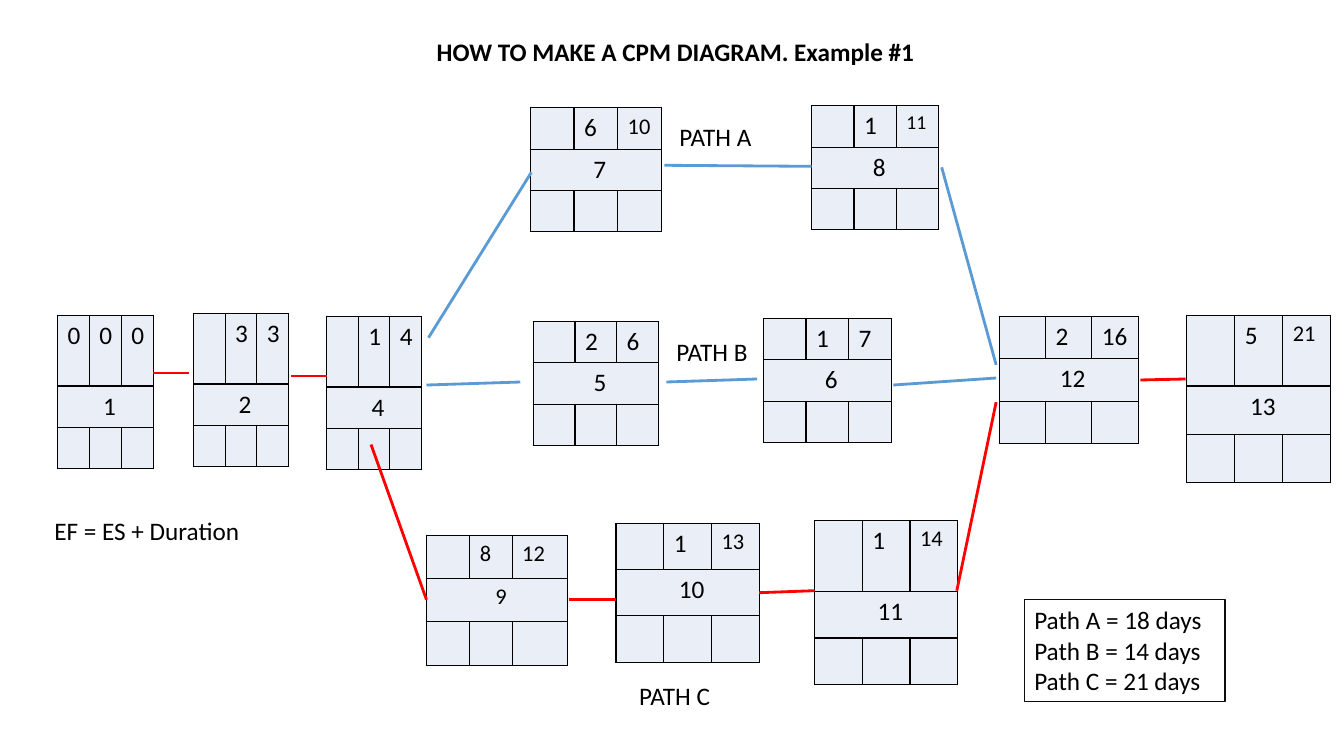
import pptx
import pptx.dml.color
import pptx.enum.shapes
import pptx.enum.text
import pptx.oxml
import pptx.oxml.ns
import pptx.util
from lxml import etree

Inches, Pt = pptx.util.Inches, pptx.util.Pt
RGBColor = pptx.dml.color.RGBColor
PP_ALIGN, MSO_ANCHOR = pptx.enum.text.PP_ALIGN, pptx.enum.text.MSO_ANCHOR

BLACK = RGBColor(0x00, 0x00, 0x00)
BOX_LINE = RGBColor(0x0D, 0x0D, 0x0D)
CELL_FILL = RGBColor(0xEA, 0xEF, 0xF7)
CRITICAL = RGBColor(0xFF, 0x00, 0x00)
REGULAR = RGBColor(0x5B, 0x9B, 0xD5)
FONT = "Calibri"

# activity: left, top, width, first row, other rows, ES, duration, EF, format
ACTIVITIES = {
    "1": (0.57, 3.13, 0.95, 0.7, 0.41, "0", "0", "0", {}),
    "2": (1.92, 3.11, 0.94, 0.7, 0.41, "", "3", "3", {}),
    "4": (3.24, 3.14, 0.94, 0.7, 0.41, "", "1", "4", {}),
    "5": (5.29, 3.19, 1.24, 0.41, 0.41, "", "2", "6", {}),
    "6": (7.57, 3.16, 1.27, 0.41, 0.41, "", "1", "7", {}),
    "7": (5.26, 1.07, 1.3, 0.41, 0.41, "", "6", "10", {"finish_size": 16}),
    "8": (8.05, 1.05, 1.26, 0.41, 0.41, "", "1", "11", {"finish_size": 14}),
    "9": (4.23, 5.31, 1.4, 0.43, 0.43, "", "8", "12",
          {"size": 16, "finish_size": 16, "columns": (0.43, 0.42, 0.55)}),
    "10": (6.11, 5.19, 1.42, 0.46, 0.46, "", "1", "13", {"finish_size": 16}),
    "11": (8.08, 5.16, 1.42, 0.71, 0.46, "", "1", "14", {"finish_size": 16}),
    "12": (9.91, 3.14, 1.38, 0.42, 0.42, "", "2", "16", {}),
    "13": (11.77, 3.13, 1.43, 0.7, 0.48, "", "5", "21", {"finish_size": 16}),
}

LINKS = {
    CRITICAL: [
        (1.52, 3.7, 1.87, 3.7), (2.89, 3.73, 3.24, 3.73),
        (3.68, 4.41, 4.23, 5.95), (5.64, 5.95, 6.11, 5.95),
        (7.53, 5.88, 8.08, 5.86), (9.49, 5.86, 9.88, 3.99),
        (11.31, 3.77, 11.76, 3.76),
    ],
    REGULAR: [
        (4.25, 3.35, 5.27, 1.71), (6.59, 1.64, 8.05, 1.65),
        (9.34, 1.66, 9.88, 3.62), (4.23, 3.82, 5.16, 3.79),
        (6.61, 3.79, 7.51, 3.76), (8.86, 3.82, 9.88, 3.75),
    ],
}

LABELS = [
    ("EF = ES + Duration", 0.44, 5.06, 2.32, True),
    ("PATH A", 6.64, 1.15, 0.92, False),
    ("PATH B", 6.61, 3.29, 0.91, False),
    ("PATH C", 6.24, 6.7, 0.91, False),
]


def write(frame, *lines, size=18, bold=False, align=PP_ALIGN.LEFT, spacing=1.0):
    for index, line in enumerate(lines):
        paragraph = frame.add_paragraph() if index else frame.paragraphs[0]
        paragraph.alignment = align
        paragraph.line_spacing = spacing
        run = paragraph.add_run()
        run.text = line
        run.font.name = FONT
        run.font.size = Pt(size)
        run.font.bold = bold
        run.font.color.rgb = BLACK


def style_cell(cell):
    cell.fill.solid()
    cell.fill.fore_color.rgb = CELL_FILL
    cell.margin_right = Inches(0.02)
    properties = cell._tc.get_or_add_tcPr()
    for position, edge in enumerate(("lnL", "lnR", "lnT", "lnB")):
        border = pptx.oxml.parse_xml(
            f'<a:{edge} {pptx.oxml.ns.nsdecls("a")} w="{Pt(1)}"><a:solidFill>'
            f'<a:srgbClr val="{BLACK}"/></a:solidFill></a:{edge}>')
        properties.insert(position, border)


def add_title(slide, left, top, width, height):
    title = slide.shapes.title
    title.left, title.top = Inches(left), Inches(top)
    title.width, title.height = Inches(width), Inches(height)
    title.text_frame.vertical_anchor = MSO_ANCHOR.BOTTOM
    write(title.text_frame, "HOW TO MAKE A CPM DIAGRAM. Example #1",
          bold=True, align=PP_ALIGN.CENTER, spacing=0.9)


def add_activity(slide, name, left, top, width, first_row, other_row,
                 start, duration, finish, size=18, finish_size=18, columns=None):
    """Draw a node: ES, duration and EF over the activity number and a blank row."""
    heights = (first_row, other_row, other_row)
    table = slide.shapes.add_table(
        3, 3, Inches(left), Inches(top), Inches(width), Inches(sum(heights))).table
    table.first_row = table.horz_banding = False
    for column, column_width in zip(table.columns, columns or [width / 3] * 3):
        column.width = Inches(column_width)
    for row, height in zip(table.rows, heights):
        row.height = Inches(height)
        for cell in row.cells:
            style_cell(cell)
    table.cell(1, 0).merge(table.cell(1, 2))
    for column, (value, value_size) in enumerate(
            ((start, size), (duration, size), (finish, finish_size))):
        if value:
            write(table.cell(0, column).text_frame, value, size=value_size)
    write(table.cell(1, 0).text_frame, name, size=size, align=PP_ALIGN.CENTER)


def add_link(slide, color, *ends):
    link = slide.shapes.add_connector(
        pptx.enum.shapes.MSO_CONNECTOR.STRAIGHT, *map(Inches, ends))
    link.line.color.rgb = color
    link.line.width = Pt(2)
    etree.SubElement(link._element.spPr, pptx.oxml.ns.qn("a:effectLst"))


def add_label(slide, caption, left, top, width, wrap):
    label = slide.shapes.add_textbox(
        Inches(left), Inches(top), Inches(width), Inches(0.4))
    label.text_frame.word_wrap = wrap
    write(label.text_frame, caption)


def add_path_totals(slide, left, top, width, height):
    totals = slide.shapes.add_shape(
        pptx.enum.shapes.MSO_SHAPE.RECTANGLE,
        Inches(left), Inches(top), Inches(width), Inches(height))
    totals.shadow.inherit = False
    totals.fill.background()
    totals.line.color.rgb = BOX_LINE
    totals.line.width = Pt(0.75)
    totals.text_frame.word_wrap = True
    totals.text_frame.vertical_anchor = MSO_ANCHOR.TOP
    write(totals.text_frame, "Path A = 18 days", "Path B = 14 days",
          "Path C = 21 days")


def main():
    deck = pptx.Presentation()
    deck.slide_width, deck.slide_height = Inches(13.33), Inches(7.5)
    slide = deck.slides.add_slide(deck.slide_layouts.get_by_name("Title Only"))
    add_title(slide, 1.7, 0.37, 10, 0.34)
    for name, (*layout, text_format) in ACTIVITIES.items():
        add_activity(slide, name, *layout, **text_format)
    for color, links in LINKS.items():
        for ends in links:
            add_link(slide, color, *ends)
    for label in LABELS:
        add_label(slide, *label)
    add_path_totals(slide, 10.16, 5.95, 1.99, 1.01)
    deck.save("out.pptx")


if __name__ == "__main__":
    main()
